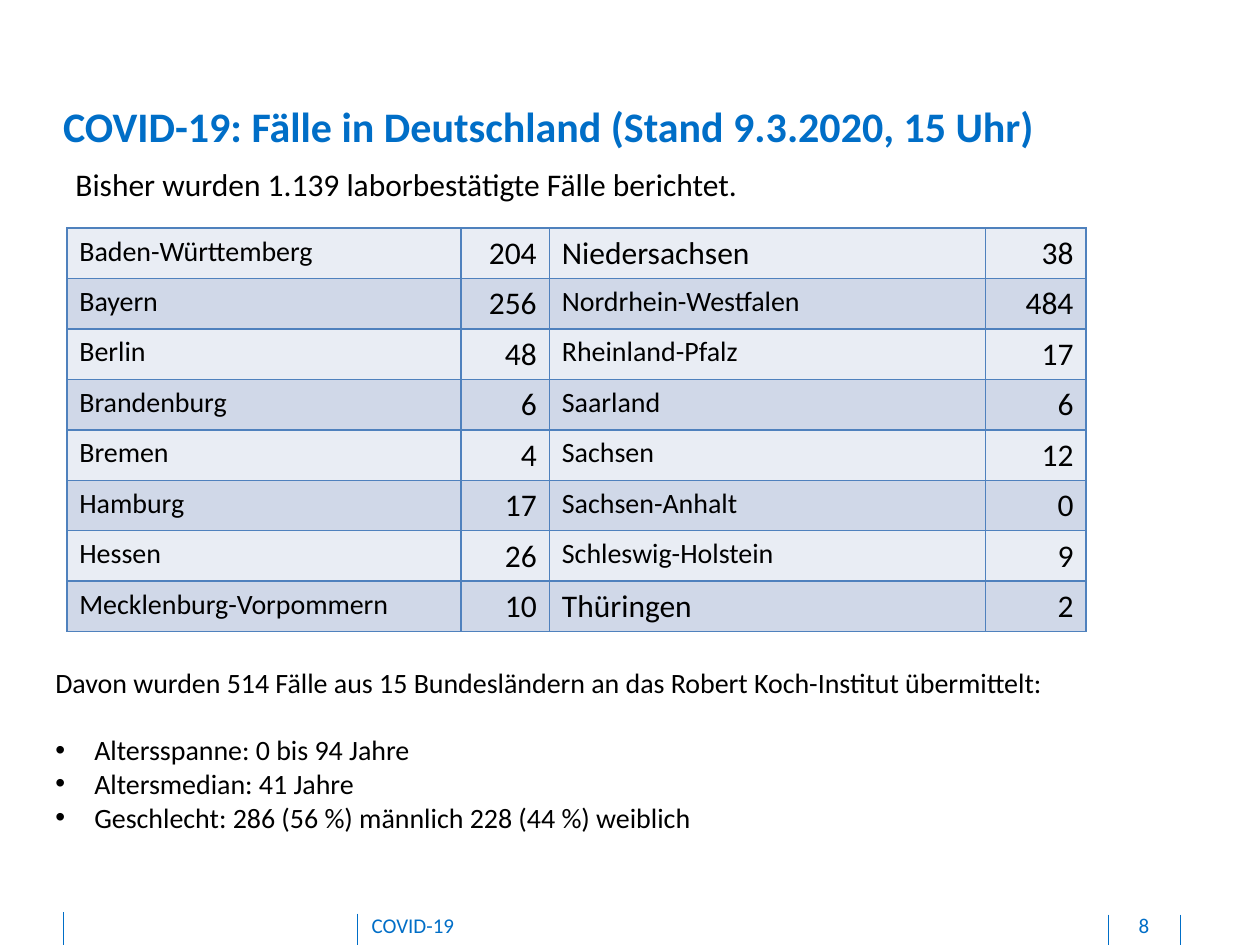
"""Build the slide on COVID-19 cases by German state."""
from collections import namedtuple

from lxml import etree
from pptx import Presentation
from pptx import util as u
from pptx.dml.color import RGBColor
from pptx.enum import shapes, text
from pptx.oxml import parse_xml
from pptx.oxml.ns import nsdecls, qn

Theme = namedtuple("Theme", "font blue black edge bands foot body lead head")
theme = Theme("Calibri", "006EC7", "000000", "4F81BD", ("E9EDF4", "D0D8E8"), 12, 16, 18, 24)


def write(para, words, size, color=theme.black, bold=False):
    """Add one styled run to a paragraph."""
    run = para.add_run()
    run.text = words
    run.font.name = theme.font
    run.font.size = u.Pt(size)
    run.font.bold = bold
    run.font.color.rgb = RGBColor.from_string(color)


def frame(left, top, width, height, pads=(0.1, 0.05, 0.1, 0.05)):
    """Add a wrapping text box and return its text frame."""
    box = slide.shapes.add_textbox(*map(u.Inches, (left, top, width, height))).text_frame
    box.word_wrap = True
    box.margin_left, box.margin_top, box.margin_right, box.margin_bottom = map(u.Inches, pads)
    return box


deck = Presentation()
deck.slide_width, deck.slide_height = u.Inches(10), u.Inches(7.5)
slide = deck.slides.add_slide(deck.slide_layouts[6])

for x, top in ((2.84, 7.25), (0.5, 7.24), (9.37, 7.26), (8.8, 7.26)):
    rule = slide.shapes.add_connector(
        shapes.MSO_CONNECTOR.STRAIGHT, u.Inches(x), u.Inches(top), u.Inches(x), u.Inches(7.5))
    rule.line.color.rgb = RGBColor.from_string(theme.blue)
    rule.line.width = u.Pt(0.5)
    etree.SubElement(rule._element.spPr, qn("a:effectLst"))

for words, left, width, side in (
    ("COVID-19", 2.95, 5.67, text.PP_ALIGN.LEFT),
    ("8", 8.81, 0.54, text.PP_ALIGN.CENTER),
):
    para = frame(left, 7.24, width, 0.21, (0, 0, 0, 0.05)).paragraphs[0]
    para.alignment = side
    write(para, words, theme.foot, theme.blue)

title = frame(0.5, 0.8, 8.85, 0.4, (0, 0, 0, 0))
write(title.paragraphs[0], "COVID-19: Fälle in Deutschland (Stand 9.3.2020, 15 Uhr)",
      theme.head, theme.blue, True)

lead = frame(0.5, 1.26, 9.18, 0.4)
write(lead.paragraphs[0], "Bisher wurden 1.139 laborbestätigte Fälle berichtet.", theme.lead)

notes = frame(0.34, 5.23, 9.18, 1.58)
write(notes.paragraphs[0],
      "Davon wurden 514 Fälle aus 15 Bundesländern an das Robert Koch-Institut übermittelt:",
      theme.body)
facts = (
    "Altersspanne: 0 bis 94 Jahre",
    "Altersmedian: 41 Jahre",
    "Geschlecht: 286 (56 %) männlich 228 (44 %) weiblich",
)
for i, fact in enumerate(facts):
    para = notes.add_paragraph()
    props = para._p.get_or_add_pPr()
    props.set("marL", str(u.Inches(0.31)))
    props.set("indent", str(u.Inches(-0.31)))
    etree.SubElement(props, qn("a:buFont")).set("typeface", "Arial")
    etree.SubElement(props, qn("a:buChar")).set("char", "•")
    para.space_before = u.Pt(0 if i else 19.5)
    write(para, fact, theme.body)

cases = (
    ("Baden-Württemberg", 204, "Niedersachsen", 38),
    ("Bayern", 256, "Nordrhein-Westfalen", 484),
    ("Berlin", 48, "Rheinland-Pfalz", 17),
    ("Brandenburg", 6, "Saarland", 6),
    ("Bremen", 4, "Sachsen", 12),
    ("Hamburg", 17, "Sachsen-Anhalt", 0),
    ("Hessen", 26, "Schleswig-Holstein", 9),
    ("Mecklenburg-Vorpommern", 10, "Thüringen", 2),
)
large = ("Niedersachsen", "Thüringen")
grid = slide.shapes.add_table(
    len(cases), 4, u.Inches(0.53), u.Inches(1.81), u.Inches(8.09), u.Inches(3.2)).table
grid.first_row = False
for col, width in zip(grid.columns, (3.13, 0.7, 3.46, 0.8)):
    col.width = u.Inches(width)
for r, row in enumerate(cases):
    grid.rows[r].height = u.Inches(0.4)
    for c, value in enumerate(row):
        cell = grid.cell(r, c)
        count = c % 2 == 1
        para = cell.text_frame.paragraphs[0]
        para.alignment = text.PP_ALIGN.RIGHT if count else text.PP_ALIGN.LEFT
        write(para, str(value), theme.lead if count or value in large else theme.body)
        props = cell._tc.get_or_add_tcPr()
        for side in "LRTB":
            props.append(parse_xml(
                f'<a:ln{side} {nsdecls("a")} w="{u.Pt(1)}"><a:solidFill>'
                f'<a:srgbClr val="{theme.edge}"/></a:solidFill></a:ln{side}>'))
        cell.fill.solid()
        cell.fill.fore_color.rgb = RGBColor.from_string(theme.bands[r % 2])

deck.save("out.pptx")
